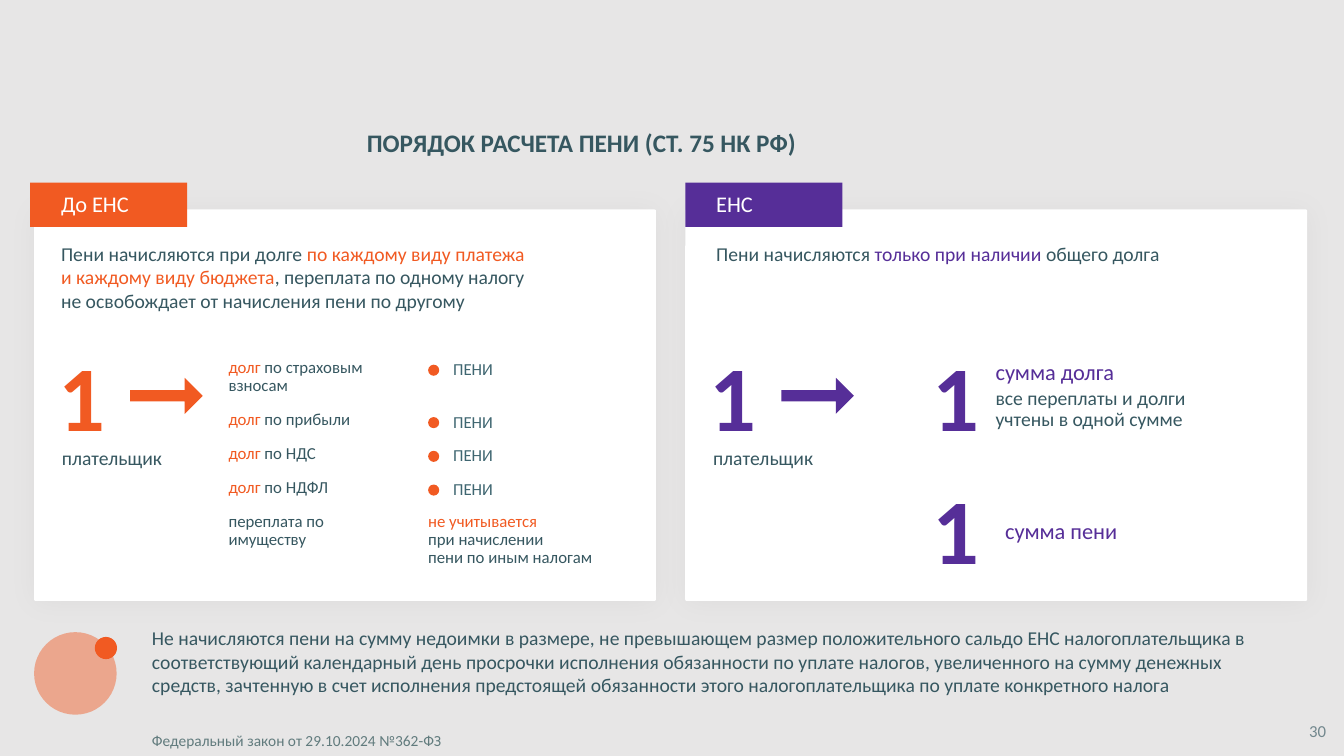
from pptx import Presentation
from pptx.dml.color import RGBColor
from pptx.enum.shapes import MSO_SHAPE
from pptx.enum.text import MSO_ANCHOR, MSO_AUTO_SIZE, PP_ALIGN
from pptx.oxml import parse_xml
from pptx.oxml.ns import nsdecls, qn
from pptx.util import Cm, Pt

RECT, CARD = MSO_SHAPE.RECTANGLE, MSO_SHAPE.ROUNDED_RECTANGLE
OVAL, ARROW = MSO_SHAPE.OVAL, MSO_SHAPE.RIGHT_ARROW
LEFT, CENTER = PP_ALIGN.LEFT, PP_ALIGN.CENTER
TOP, NO_FIT = MSO_ANCHOR.TOP, MSO_AUTO_SIZE.NONE

FONT = "Calibri"
INK, TEAL, MUTED = "365760", "3F6671", "617B7D"
ORANGE, VIOLET = "F15A22", "562E98"
WHITE, GREY = "FFFFFF", "E7E6E6"
CARD_SIZE = (15.67, 9.86)


def paint(fill, color):
    fill.solid()
    fill.fore_color.rgb = RGBColor.from_string(color)


def fade(shape, percent):
    """Make every colour of the shape partly transparent."""
    for color in shape.element.iter(qn("a:srgbClr")):
        color.append(parse_xml(f'<a:alpha {nsdecls("a")} val="{percent * 1000}"/>'))


def write(shape, spans, size, bold=False, spacing=None, align=LEFT):
    """Fill one paragraph with (text, colour) spans; a newline breaks the line."""
    frame = shape.text_frame
    frame.word_wrap = True
    frame.auto_size = NO_FIT
    frame.vertical_anchor = TOP
    para = frame.paragraphs[0]
    para.alignment = align
    para.line_spacing = spacing
    para.font.name, para.font.size, para.font.bold = FONT, Pt(size), bold
    if len(spans) == 1:
        paint(para.font.fill, spans[0][1])
    for text, color in spans:
        for number, line in enumerate(text.split("\n")):
            if number:
                para.add_line_break()
            if line:
                span = para.add_run()
                span.text = line
                if len(spans) > 1:
                    paint(span.font.fill, color)


def add_text(page, left, top, width, height, spans, size, **style):
    box = page.shapes.add_textbox(Cm(left), Cm(top), Cm(width), Cm(height))
    write(box, spans, size, **style)
    return box


def add_figure(page, kind, left, top, width, height, color):
    shape = page.shapes.add_shape(kind, Cm(left), Cm(top), Cm(width), Cm(height))
    shape.shadow.inherit = False
    paint(shape.fill, color)
    shape.line.fill.background()
    return shape


def add_title(page, left, top, width, height, text):
    title = page.shapes.title
    title.left, title.top, title.width, title.height = map(Cm, (left, top, width, height))
    write(title, [(text, INK)], 18, bold=True, spacing=0.9)


def add_one(page, left, top, color):
    add_text(page, left, top, 1.83, 3.07, [("1", color)], 66, bold=True)


def add_card(page, left, top, tag_left, tag, intro, color):
    """White card with its tag, its introduction and the payer."""
    card = add_figure(page, CARD, left, top, *CARD_SIZE, WHITE)
    card.adjustments[0] = 0.003
    card.element.spPr.find(qn("a:effectLst")).append(parse_xml(
        f'<a:outerShdw {nsdecls("a")} blurRad="254000" dist="12700" dir="5400000">'
        '<a:srgbClr val="000000"><a:alpha val="4000"/></a:srgbClr></a:outerShdw>'))

    # Tag and introduction
    add_figure(page, RECT, tag_left, top - 0.68, 3.96, 1.12, color)
    add_text(page, tag_left + 0.53, top - 0.61, 3, 0.94, [(tag, WHITE)], 16)
    add_text(page, tag_left + 0.53, top + 0.69, 14.6, 2.06, intro, 14)

    # Payer and arrow
    add_one(page, left + 0.37, top + 3.15, color)
    add_text(page, left + 0.45, top + 5.82, 3.5, 0.86, [("плательщик", INK)], 14)
    arrow = add_figure(page, ARROW, left + 2.42, top + 4.24, 1.83, 0.91, color)
    arrow.adjustments[0] = 0.314


def add_debts(page, left, top):
    """Debts of the payer, each with its own penalty."""
    debts = ["по страховым\nвзносам", "по прибыли", "по НДС", "по НДФЛ"]
    pitch, second = 0.85, top + 4.96
    for number, debt in enumerate(debts):
        row = second + pitch * (number - 1) if number else top + 3.64
        add_text(page, left + 4.65, row, 4.6, 1.17,
                 [("долг ", ORANGE), (debt, INK)], 12, spacing=0.9)
        add_figure(page, OVAL, left + 9.93, row + 0.27, 0.28, 0.28, ORANGE)
        add_text(page, left + 10.31, row + 0.06, 1.9, 0.71,
                 [("ПЕНИ", TEAL)], 12, spacing=0.9)

    # Overpayment
    row = second + pitch * len(debts[1:])
    add_text(page, left + 4.65, row, 3.6, 1.17,
             [("переплата по\nимуществу", INK)], 12, spacing=0.9)
    add_text(page, left + 9.68, row, 5.4, 1.65,
             [("не учитывается\n", ORANGE), ("при начислении\nпени по иным налогам", INK)],
             12, spacing=0.9)


def add_totals(page, left, top):
    """Single debt and single penalty."""
    for offset in (3.15, 6.5):
        add_one(page, left + 5.97, top + offset, VIOLET)
    add_text(page, left + 7.57, top + 3.63, 3.9, 0.94, [("сумма долга", VIOLET)], 16)
    add_text(page, left + 7.57, top + 4.39, 6.3, 1.35,
             [("все переплаты и долги\nучтены в одной сумме", INK)], 14, spacing=0.9)
    add_text(page, left + 7.67, top + 7.62, 3.61, 0.94,
             [("сумма пени", VIOLET)], 16, align=CENTER)


def add_note(page, left, top):
    """Exception with its marker, the law and the page number."""
    disc = add_figure(page, OVAL, left, top, 2.08, 2.08, ORANGE)
    fade(disc, 45)
    add_figure(page, OVAL, left + 1.53, top + 0.12, 0.56, 0.56, ORANGE)
    note = (
        "Не начисляются пени на сумму недоимки в размере, не превышающем размер "
        "положительного сальдо ЕНС налогоплательщика в соответствующий календарный день "
        "просрочки исполнения обязанности по уплате налогов, увеличенного на сумму денежных "
        "средств, зачтенную в счет исполнения предстоящей обязанности этого "
        "налогоплательщика по уплате конкретного налога")
    add_text(page, left + 2.72, top - 0.28, 29.29, 2.64, [(note, INK)], 14)
    add_text(page, left + 2.72, top + 2.38, 10.72, 0.74,
             [("Федеральный закон от 29.10.2024 №362-ФЗ", MUTED)], 11)
    number = add_text(page, left + 31.88, top + 2.1, 1, 0.76, [("30", INK)], 12)
    fade(number, 65)


def main():
    deck = Presentation()
    deck.slide_width, deck.slide_height = Cm(33.87), Cm(19.05)
    page = deck.slides.add_slide(deck.slide_layouts[5])
    paint(page.background.fill, GREY)

    add_title(page, 8.99, 3.17, 16.71, 0.94, "ПОРЯДОК РАСЧЕТА ПЕНИ (СТ. 75 НК РФ)")
    add_card(page, 0.86, 5.28, 0.76, "До ЕНС", [
        ("Пени начисляются при долге ", INK),
        ("по каждому виду платежа\nи каждому виду бюджета", ORANGE),
        (", переплата по одному налогу\nне освобождает от начисления пени по другому", INK),
    ], ORANGE)
    add_debts(page, 0.86, 5.28)
    add_card(page, 17.27, 5.28, 17.27, "ЕНС", [
        ("Пени начисляются ", INK), ("только при наличии ", VIOLET), ("общего долга", INK),
    ], VIOLET)
    add_totals(page, 17.27, 5.28)
    add_note(page, 0.86, 15.93)
    deck.save("out.pptx")


if __name__ == "__main__":
    main()
